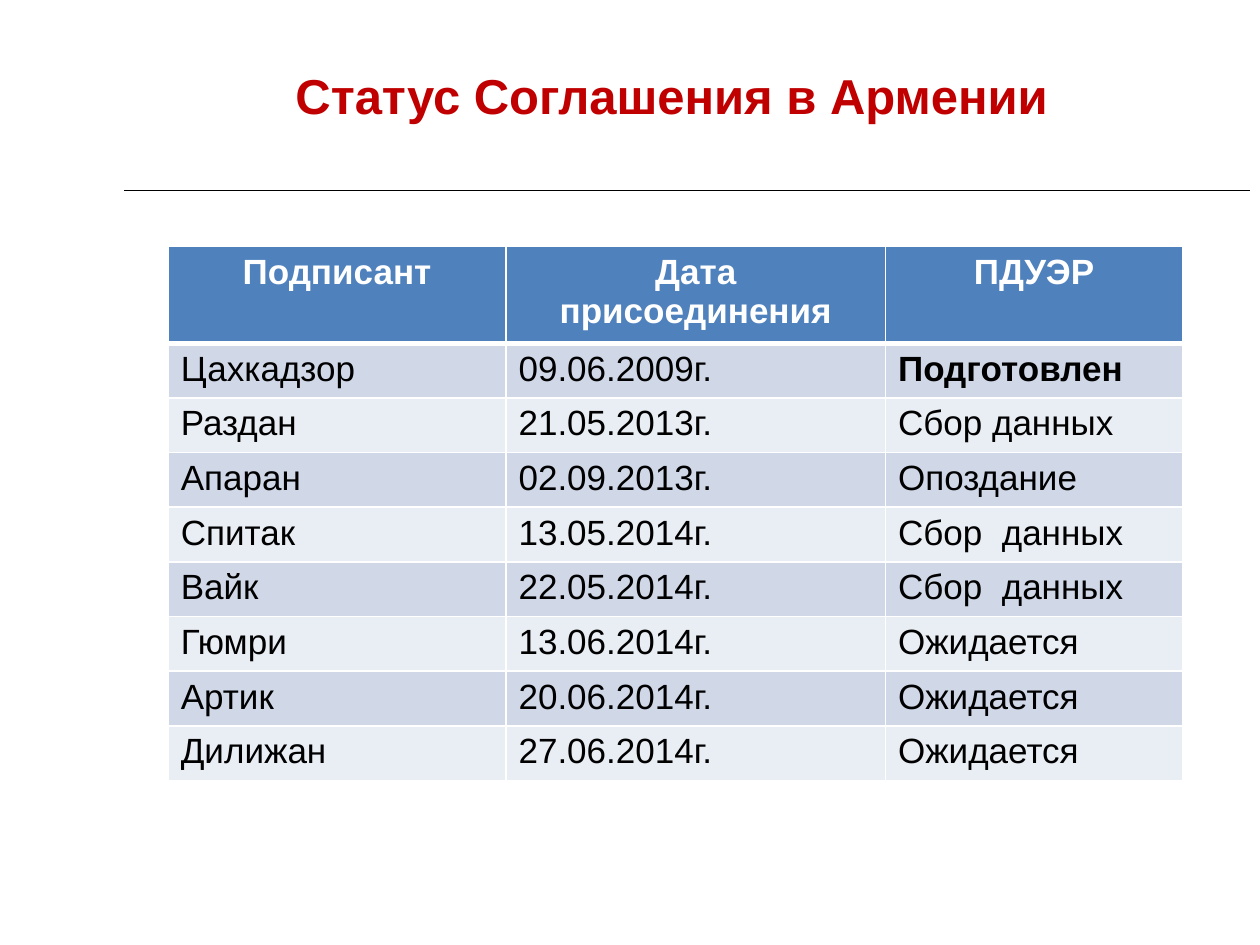
from lxml import etree
from pptx import Presentation
from pptx import util as u
from pptx.dml import color
from pptx.enum import shapes, text
from pptx.oxml import ns

COLORS = {
    "title": "C00000",
    "header": "4F81BD",
    "odd": "D0D8E8",
    "even": "E9EDF4",
    "black": "000000",
    "white": "FFFFFF",
}
FONT = "Arial"
COLUMN_WIDTHS = [6.81, 7.65, 5.99]
HEADER_HEIGHT = 1.91
ROW_HEIGHT = 1.1
HEADERS = ["Подписант", "Дата присоединения", "ПДУЭР"]
SIGNATORIES = [
    ("Цахкадзор", "09.06.2009г.", "Подготовлен"),
    ("Раздан", "21.05.2013г.", "Сбор данных"),
    ("Апаран", "02.09.2013г.", "Опоздание"),
    ("Спитак", "13.05.2014г.", "Сбор  данных"),
    ("Вайк", "22.05.2014г.", "Сбор  данных"),
    ("Гюмри", "13.06.2014г.", "Ожидается"),
    ("Артик", "20.06.2014г.", "Ожидается"),
    ("Дилижан", "27.06.2014г.", "Ожидается"),
]


def rgb(name):
    return color.RGBColor.from_string(COLORS[name])


def style_paragraph(paragraph, size, color_name, bold, alignment):
    paragraph.alignment = alignment
    font = paragraph.font
    font.name, font.size, font.bold = FONT, u.Pt(size), bold
    font.color.rgb = rgb(color_name)


def add_title(slide, wording):
    shape = slide.shapes.add_textbox(u.Cm(2.11), 0, u.Cm(22.86), u.Cm(3.84))
    frame = shape.text_frame
    frame.word_wrap = True
    frame.vertical_anchor = text.MSO_ANCHOR.MIDDLE
    frame.text = wording
    style_paragraph(frame.paragraphs[0], 28, "title", True, text.PP_ALIGN.CENTER)


def add_rule(slide):
    line = slide.shapes.add_connector(
        shapes.MSO_CONNECTOR.STRAIGHT, u.Cm(2.5), u.Cm(3.84), u.Cm(25.2), u.Cm(3.84))
    line.line.color.rgb = rgb("black")
    line.line.width = u.Pt(0.75)
    etree.SubElement(line._element.spPr, ns.qn("a:effectLst"))


def set_borders(cell, top, bottom):
    properties = cell._tc.get_or_add_tcPr()
    for side, width in (("L", 1), ("R", 1), ("T", top), ("B", bottom)):
        border = etree.SubElement(properties, ns.qn(f"a:ln{side}"), w=str(u.Pt(width)))
        fill = etree.SubElement(border, ns.qn("a:solidFill"))
        etree.SubElement(fill, ns.qn("a:srgbClr"), val=COLORS["white"])


def fill_cell(cell, wording, row, column):
    header = row == 0
    set_borders(cell, 3 if row == 1 else 1, 3 if header else 1)
    cell.fill.solid()
    cell.fill.fore_color.rgb = rgb("header" if header else "odd" if row % 2 else "even")
    cell.text = wording
    style_paragraph(
        cell.text_frame.paragraphs[0], 20,
        "white" if header else "black",
        header or (row, column) == (1, 2),
        text.PP_ALIGN.CENTER if header else text.PP_ALIGN.LEFT)


def add_status_table(slide):
    rows = [HEADERS, *SIGNATORIES]
    heights = [HEADER_HEIGHT] + [ROW_HEIGHT] * len(SIGNATORIES)
    table = slide.shapes.add_table(
        len(rows), len(HEADERS), u.Cm(3.39), u.Cm(4.97),
        u.Cm(sum(COLUMN_WIDTHS)), u.Cm(sum(heights))).table
    for column, width in zip(table.columns, COLUMN_WIDTHS):
        column.width = u.Cm(width)
    for row, height in zip(table.rows, heights):
        row.height = u.Cm(height)
    for row, values in enumerate(rows):
        for column, wording in enumerate(values):
            fill_cell(table.cell(row, column), wording, row, column)


def main():
    presentation = Presentation()
    presentation.slide_width = u.Cm(25.4)
    presentation.slide_height = u.Cm(19.05)
    slide = presentation.slides.add_slide(presentation.slide_layouts[6])
    add_rule(slide)
    add_title(slide, "Статус Соглашения в Армении")
    add_status_table(slide)
    presentation.save("out.pptx")


if __name__ == "__main__":
    main()
